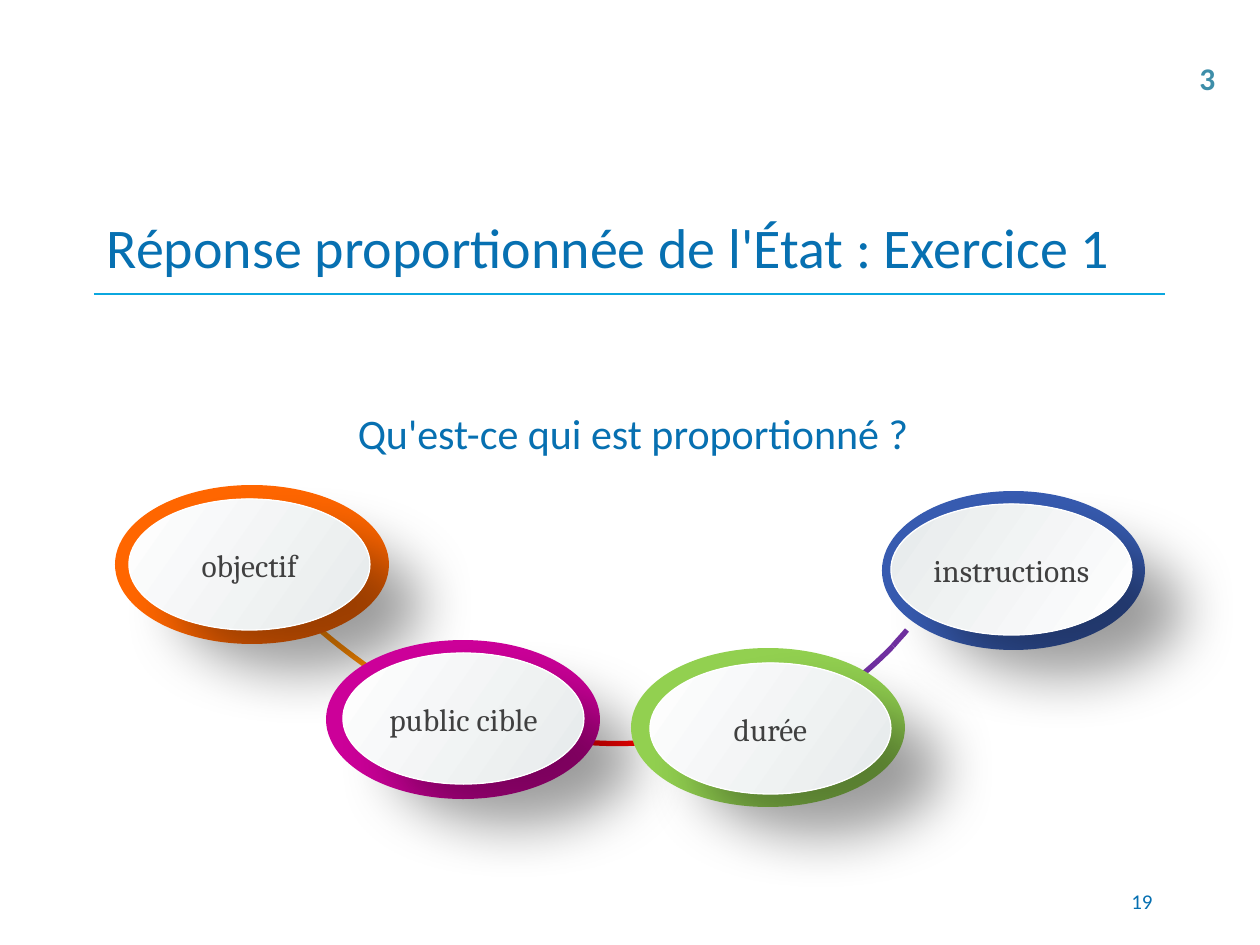
import pptx
import pptx.dml.color
import pptx.enum.shapes
import pptx.enum.text
import pptx.oxml
import pptx.oxml.ns
import pptx.util

PX = 7257.14  # EMU per pixel, 126 pixels to the inch
ALIGN = pptx.enum.text.PP_ALIGN
ANCHOR = pptx.enum.text.MSO_ANCHOR
OVAL = pptx.enum.shapes.MSO_SHAPE.OVAL
THEME = {
    "heading": "0770B1", "rule": "0BA7DF", "marker": "3E8EA9", "label": "404040",
    "white": "FFFFFF", "grey": "E6EAEB",
    "heading_font": "Calibri", "label_font": "Cambria",
    "title_size": 32, "question_size": 24, "label_size": 18, "number_size": 12,
}
SHADOW = (
    '<a:outerShdw xmlns:a="http://schemas.openxmlformats.org/drawingml/2006/main" '
    'blurRad="419100" dist="466090" dir="2340000" algn="tl" rotWithShape="0">'
    '<a:srgbClr val="000000"><a:alpha val="38000"/></a:srgbClr></a:outerShdw>'
)


def rgb(name):
    return pptx.dml.color.RGBColor.from_string(THEME.get(name, name))


def write(shape, box, text, size, color, font="heading_font", align=ALIGN.LEFT,
          anchor=ANCHOR.MIDDLE, wrap=True, bold=False):
    """Place the shape at box (px) and fill its first paragraph with one run."""
    shape.left, shape.top, shape.width, shape.height = [round(v * PX) for v in box]
    frame = shape.text_frame
    frame.auto_size = pptx.enum.text.MSO_AUTO_SIZE.NONE
    frame.word_wrap = wrap
    frame.vertical_anchor = anchor
    paragraph = frame.paragraphs[0]
    paragraph.alignment = align
    run = paragraph.add_run()
    run.text = text
    run.font.name = THEME[font]
    run.font.size = pptx.util.Pt(THEME[size])
    run.font.bold = bold
    run.font.color.rgb = rgb(color)
    return paragraph


deck = pptx.Presentation()
deck.slide_width, deck.slide_height = pptx.util.Inches(10), pptx.util.Inches(7.5)
slide = deck.slides.add_slide(deck.slide_layouts[5])
shapes = slide.shapes

# Heading and its rule
write(shapes.title, (94, 199, 1071, 95), "Réponse proportionnée de l'État : Exercice 1",
      "title_size", "heading")
rule = shapes.add_connector(pptx.enum.shapes.MSO_CONNECTOR.STRAIGHT,
                            *[round(v * PX) for v in (94, 294, 1165, 294)])
rule.line.color.rgb = rgb("rule")
rule.line.width = pptx.util.Pt(0.75)
rule._element.spPr.append(pptx.oxml.parse_xml(
    '<a:effectLst xmlns:a="http://schemas.openxmlformats.org/drawingml/2006/main"/>'))

# Links between the aspects: four Bezier control points each
links = [
    ("7030A0", [(907, 630), (903, 635), (898, 640), (893, 646)]),
    ("7030A0", [(893, 646), (877, 663), (859, 677), (842, 692)]),
    ("7030A0", [(842, 692), (819, 707), (795, 719), (770, 730)]),
    ("FF0000", [(566, 741), (593, 743), (621, 745), (648, 742)]),
    ("FF0000", [(648, 742), (663, 742), (676, 740), (690, 738)]),
    ("FF8A00", [(311, 622), (338, 646), (370, 670), (406, 692)]),
]
STEPS = 12
for color, controls in links:
    curve = []
    for step in range(STEPS + 1):
        t = step / STEPS
        weights = ((1 - t) ** 3, 3 * t * (1 - t) ** 2, 3 * t ** 2 * (1 - t), t ** 3)
        curve.append([round(PX * sum(w * c[axis] for w, c in zip(weights, controls)))
                      for axis in (0, 1)])
    builder = shapes.build_freeform(*curve[0], scale=1.0)
    builder.add_line_segments(curve[1:], close=False)
    link = builder.convert_to_shape()
    link.shadow.inherit = False
    link.fill.background()
    link.line.color.rgb = rgb(color)
    link.line.width = pptx.util.Pt(3)

# Aspects: a coloured ring behind a shaded face
aspects = [
    ("instructions", "375BB0", (882, 491, 263, 159), (891, 504), ("grey", "white")),
    ("objectif", "FF6600", (115, 485, 274, 159), (129, 499), ("white", "grey")),
    ("public cible", "CC0099", (326, 640, 274, 159), (343, 653), ("white", "grey")),
    ("durée", "92D050", (631, 648, 274, 159), (650, 663), ("white", "grey")),
]
FACE_SIZE = (241, 131)
for label, color, ring_box, face_corner, shades in aspects:
    ring = shapes.add_shape(OVAL, *[round(v * PX) for v in ring_box])
    ring.shadow.inherit = False
    ring.fill.solid()
    ring.fill.fore_color.rgb = rgb(color)
    ring.line.fill.background()

    face_box = face_corner + FACE_SIZE
    face = shapes.add_shape(OVAL, *[round(v * PX) for v in face_box])
    face.fill.gradient()
    face.fill.gradient_angle = 325
    for stop, shade, position in zip(face.fill.gradient_stops, shades, (0, 1)):
        stop.color.rgb = rgb(shade)
        stop.position = position
    face.line.color.rgb = rgb("white")
    face.line.width = 0
    face.shadow.inherit = False
    effects = face._element.spPr.find(pptx.oxml.ns.qn("a:effectLst"))
    effects.append(pptx.oxml.parse_xml(SHADOW))
    frame = face.text_frame
    frame.margin_left = frame.margin_right = frame.margin_top = frame.margin_bottom = 0
    write(face, face_box, label, "label_size", "label", "label_font", ALIGN.CENTER)

# Question, section marker and page number
question = write(shapes.add_textbox(0, 0, 0, 0), (326, 394, 614, 71),
                 "Qu'est-ce qui est proportionné ?", "question_size", "heading",
                 align=ALIGN.CENTER, anchor=ANCHOR.TOP)
question.line_spacing = 1.15
question.space_after = pptx.util.Pt(6)
write(shapes.add_textbox(0, 0, 0, 0), (1187, 53, 40, 50), "3", "label_size", "marker",
      anchor=ANCHOR.TOP, wrap=False, bold=True)
write(shapes.add_textbox(0, 0, 0, 0), (903, 876, 262, 50), "19", "number_size", "heading",
      align=ALIGN.RIGHT)

deck.save("out.pptx")
